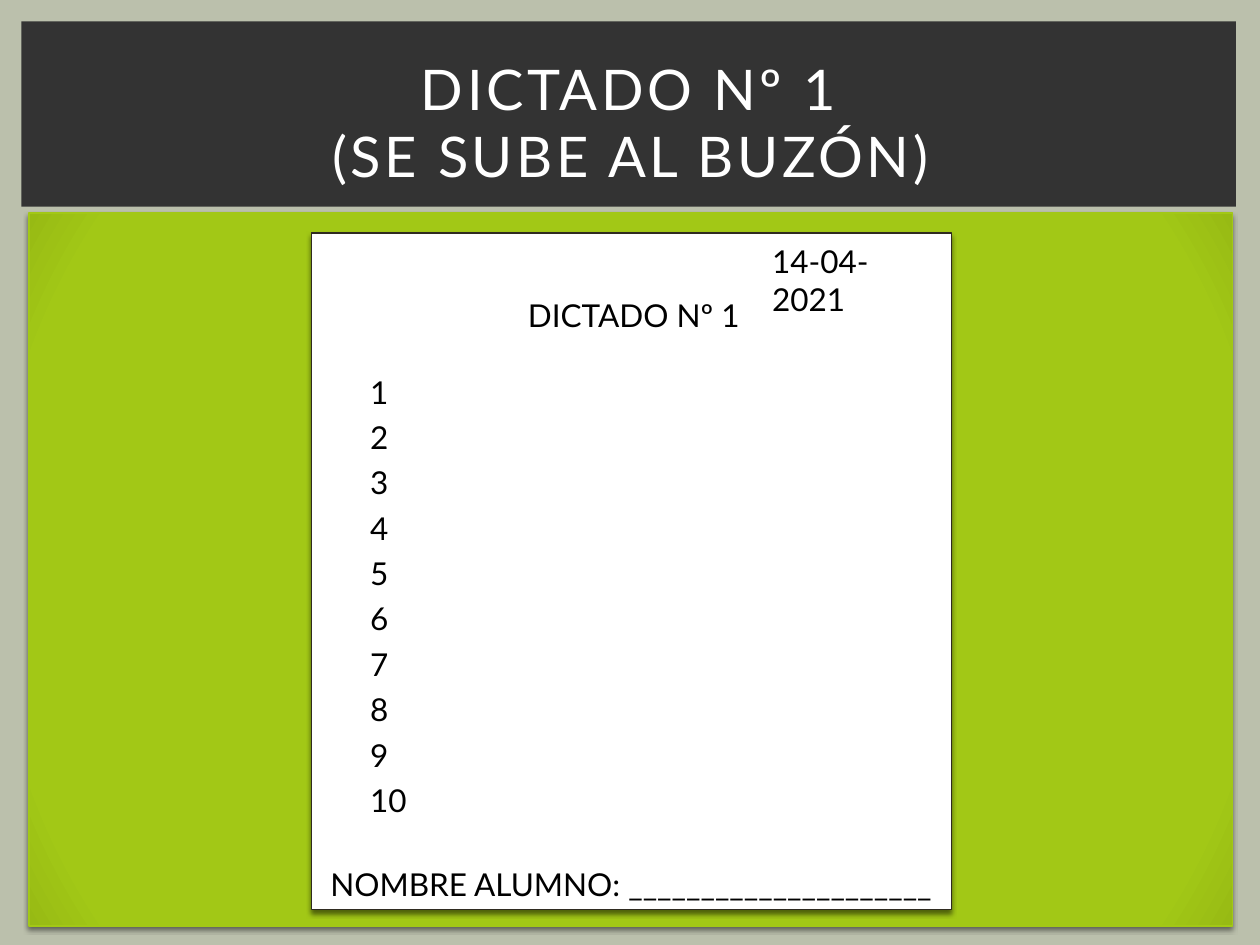
from lxml import etree
from pptx import Presentation
from pptx.dml.color import RGBColor
from pptx.enum import shapes, text
from pptx.oxml import parse_xml
from pptx.oxml.ns import nsdecls
from pptx.util import Pt

# Content
HEADING = "DICTADO Nº 1\v(SE SUBE AL BUZÓN)"
DATE = "14-04-2021"
SHEET_TITLE = "DICTADO Nº 1"
NAME_LINE = "NOMBRE ALUMNO: " + "_" * 21
ANSWERS = [str(number) for number in range(1, 11)]

THEME = {
    "font": "Lato", "heading_size": 32, "body_size": 18,
    "background": "BBC0AC", "band": "333333", "heading": "FFFFFF",
    "board": "A2C816", "board_edge": "97BA14",
    "sheet": "FFFFFF", "sheet_line": "2F2B20", "ink": "000000",
}

# Areas in points: left, top, width, height
BAND = (12.24, 12.24, 694.08, 105.84)
HEADING_AREA = (30.24, 28.08, 660.24, 82.8)
BOARD = (16.56, 121.68, 687.6, 407.52)
SHEET = (177.84, 133.2, 365.76, 386.64)
LABEL_HEIGHT = 29.08
DATE_WIDTH = 109.44
sheet_left, sheet_top, sheet_width, sheet_height = SHEET
sheet_right, sheet_bottom = sheet_left + sheet_width, sheet_top + sheet_height

LABELS = [  # lines, area, alignment, line spacing
    ([DATE], (sheet_right - DATE_WIDTH, 134.64, DATE_WIDTH, LABEL_HEIGHT), "LEFT", 1),
    ([SHEET_TITLE], (217.44, 165.6, 289.44, LABEL_HEIGHT), "CENTER", 1),
    ([NAME_LINE], (sheet_left, sheet_bottom - LABEL_HEIGHT, sheet_width, LABEL_HEIGHT),
     "CENTER", 1),
    (ANSWERS, (204.48, 205.2, 324, 268.56), "LEFT", 1.2),
]


def color(role):
    return RGBColor.from_string(THEME[role])


def add_panel(slide, area, fill, line=None, raised=False):
    panel = slide.shapes.add_shape(shapes.MSO_SHAPE.RECTANGLE, *map(Pt, area))
    panel.shadow.inherit = False
    panel.fill.solid()
    panel.fill.fore_color.rgb = color(fill)
    if line:
        panel.line.color.rgb = color(line)
        panel.line.width = Pt(0.79)
    else:
        panel.line.fill.background()
    if raised:
        effects = panel._element.spPr.find("{*}effectLst")
        effects.append(parse_xml(
            f'<a:outerShdw {nsdecls("a")} blurRad="{Pt(2.5)}" dist="{Pt(2)}" '
            'dir="5400000" rotWithShape="0"><a:srgbClr val="000000">'
            '<a:alpha val="50000"/></a:srgbClr></a:outerShdw>'))
    return panel


def shade_edges(panel, inner, outer):
    stops = [(0, inner), (90, inner), (100, outer)]
    stop_xml = "".join(f'<a:gs pos="{pos * 1000}"><a:srgbClr val="{THEME[role]}"/></a:gs>'
                       for pos, role in stops)
    gradient = parse_xml(
        f'<a:gradFill {nsdecls("a")} rotWithShape="1"><a:gsLst>{stop_xml}</a:gsLst>'
        '<a:path path="circle"><a:fillToRect l="100000" t="100000" r="100000" b="100000"/>'
        '</a:path></a:gradFill>')
    properties = panel._element.spPr
    properties.replace(properties.find("{*}solidFill"), gradient)


def add_text(slide, lines, area, align, size, ink, spacing=1):
    box = slide.shapes.add_textbox(*map(Pt, area))
    frame = box.text_frame
    frame.text = "\n".join(lines)
    frame.word_wrap = True
    for paragraph in frame.paragraphs:
        paragraph.alignment = getattr(text.PP_ALIGN, align)
        paragraph.line_spacing = spacing
        for run in paragraph.runs:
            run.font.name = THEME["font"]
            run.font.size = Pt(THEME[size])
            run.font.color.rgb = color(ink)
    return frame


def main():
    deck = Presentation()
    deck.slide_width, deck.slide_height = Pt(720), Pt(540)
    slide = deck.slides.add_slide(deck.slide_layouts[6])
    slide.background.fill.solid()
    slide.background.fill.fore_color.rgb = color("background")

    # Heading band, with letters spaced 2 pt apart
    add_panel(slide, BAND, "band")
    heading = add_text(slide, [HEADING], HEADING_AREA, "CENTER", "heading_size", "heading")
    heading.vertical_anchor = text.MSO_ANCHOR.MIDDLE
    for run in heading.paragraphs[0].runs:
        run.font._element.set("spc", "200")

    # Green board with the answer sheet on it
    board = add_panel(slide, BOARD, "board", "board", raised=True)
    shade_edges(board, "board", "board_edge")
    add_panel(slide, SHEET, "sheet", "sheet_line", raised=True)

    # Writing on the sheet
    for lines, area, align, spacing in LABELS:
        label = add_text(slide, lines, area, align, "body_size", "ink", spacing)
        label.auto_size = text.MSO_AUTO_SIZE.SHAPE_TO_FIT_TEXT

    deck.save("out.pptx")


if __name__ == "__main__":
    main()
